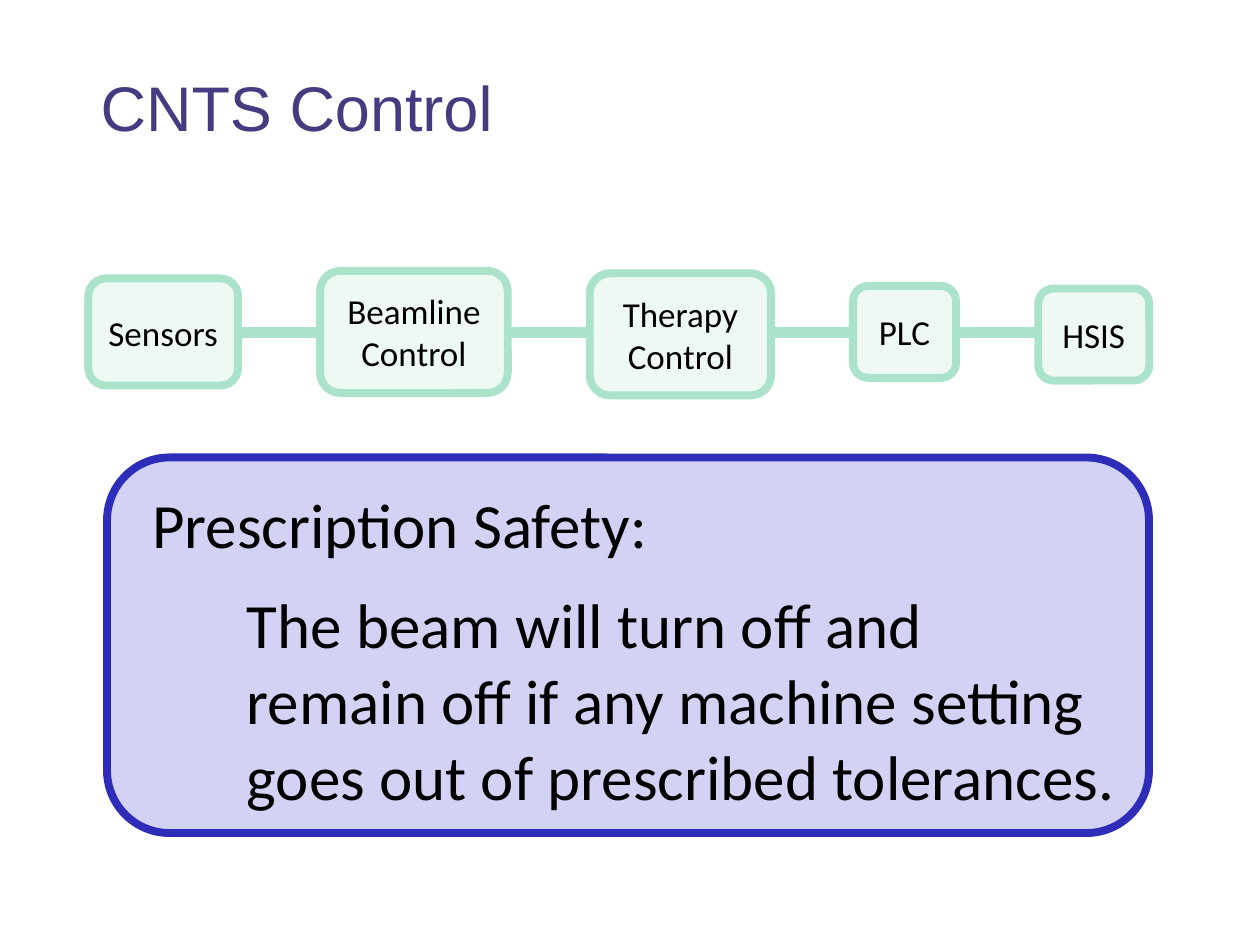
from lxml import etree
from pptx import Presentation
from pptx.dml.color import RGBColor
from pptx.enum import shapes, text
from pptx.oxml import ns
from pptx.util import Pt

TITLE_COLOR = RGBColor(0x44, 0x3C, 0x80)
BLACK = RGBColor(0, 0, 0)
STAGE_FILL = RGBColor(0xEE, 0xF9, 0xF4)
STAGE_LINE = RGBColor(0xAA, 0xE2, 0xCA)
PANEL_FILL = RGBColor(0xD2, 0xD2, 0xF4)
PANEL_LINE = RGBColor(0x2D, 0x2D, 0xB9)

# Label lines, then left, top, width, height in points
STAGES = [
    (["Sensors"], 50.4, 159.1, 85.7, 61.2),
    (["Beamline", "Control"], 182.9, 154.8, 107.3, 69.8),
    (["Therapy", "Control"], 337, 156.2, 103.7, 69.8),
    (["PLC"], 487.4, 163.4, 59, 52.6),
    (["HSIS"], 593.3, 164.9, 63.4, 52.6),
]


def style_font(font, size, color=BLACK, name="Calibri"):
    font.size = Pt(size)
    font.name = name
    font.color.rgb = color


def add_rounded_box(slide, left, top, width, height, fill, line):
    shape = slide.shapes.add_shape(
        shapes.MSO_SHAPE.ROUNDED_RECTANGLE, Pt(left), Pt(top), Pt(width), Pt(height))
    shape.shadow.inherit = False
    shape.fill.solid()
    shape.fill.fore_color.rgb = fill
    shape.line.color.rgb = line
    shape.line.width = Pt(4.5)
    return shape


def add_stage(slide, lines, left, top, width, height):
    shape = add_rounded_box(slide, left, top, width, height, STAGE_FILL, STAGE_LINE)
    frame = shape.text_frame
    frame.vertical_anchor = text.MSO_ANCHOR.MIDDLE
    frame.text = "\n".join(lines)
    for paragraph in frame.paragraphs:
        paragraph.alignment = text.PP_ALIGN.CENTER
        style_font(paragraph.font, 20)


def add_text_box(slide, left, top, width, height, wrap=False):
    frame = slide.shapes.add_textbox(Pt(left), Pt(top), Pt(width), Pt(height)).text_frame
    frame.word_wrap = wrap
    frame.auto_size = text.MSO_AUTO_SIZE.SHAPE_TO_FIT_TEXT
    return frame.paragraphs[0]


def add_title(slide):
    paragraph = add_text_box(slide, 50.4, 31.7, 247, 55.4)
    for words, size, color, name in [
        ("CNTS", 36, TITLE_COLOR, "Arial"),
        (" ", 40, BLACK, "Times New Roman"),
        ("Control", 36, TITLE_COLOR, "Arial"),
    ]:
        run = paragraph.add_run()
        run.text = words
        style_font(run.font, size, color, name)


def add_statement(slide, words, left, top, width, height, wrap=False):
    paragraph = add_text_box(slide, left, top, width, height, wrap)
    paragraph.text = words
    style_font(paragraph.font, 36)


def add_chain_line(slide, start, end, y):
    connector = slide.shapes.add_connector(
        shapes.MSO_CONNECTOR.STRAIGHT, Pt(start), Pt(y), Pt(end), Pt(y))
    connector.line.color.rgb = STAGE_LINE
    connector.line.width = Pt(6)
    etree.SubElement(connector._element.spPr, ns.qn("a:effectLst"))


def main():
    presentation = Presentation()
    presentation.slide_width = Pt(720)
    presentation.slide_height = Pt(540)
    slide = presentation.slides.add_slide(presentation.slide_layouts[6])

    add_title(slide)

    # Control chain: the line runs behind the stages
    add_chain_line(slide, 92.9, 625, 190.1)
    for stage in STAGES:
        add_stage(slide, *stage)

    # Safety panel
    add_rounded_box(slide, 61.2, 261.4, 595.4, 214.6, PANEL_FILL, PANEL_LINE)
    add_statement(slide, "Prescription Safety:", 79.9, 273.6, 303.8, 51.1)
    add_statement(
        slide,
        "The beam will turn off and remain off if any machine setting "
        "goes out of prescribed tolerances.",
        133.9, 331.2, 510.5, 138.2, wrap=True)

    presentation.save("out.pptx")


if __name__ == "__main__":
    main()
